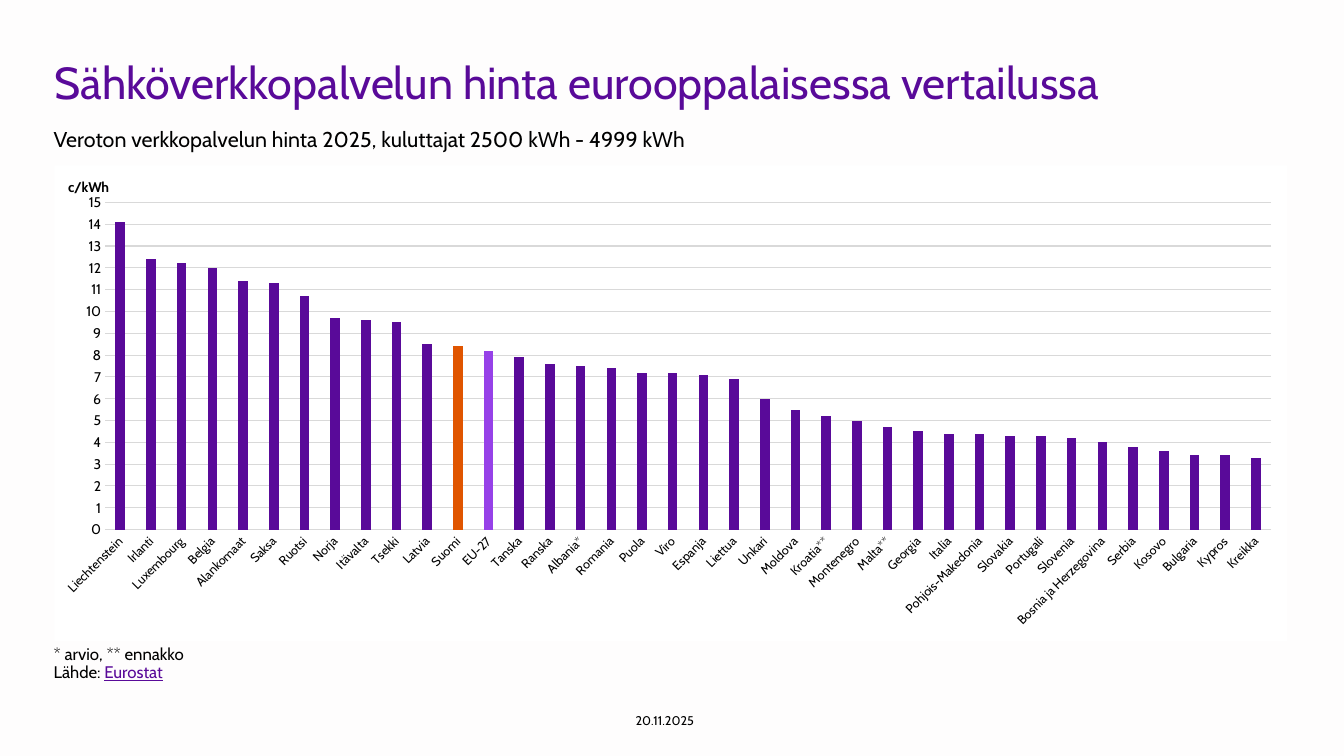
import dataclasses

import lxml.etree
import pptx
import pptx.chart.data
import pptx.dml.color
import pptx.enum.chart
import pptx.enum.text
import pptx.oxml
import pptx.oxml.ns
import pptx.util

PURPLE, ORANGE, VIOLET = "590A99", "E05500", "9641E8"
BLACK, WHITE, GREY, PAPER = "000000", "FFFFFF", "D9D9D9", "FEFDFD"
FONT = "Cabin"
SLIDE_W, SLIDE_H = pptx.util.Inches(13.33), pptx.util.Inches(7.5)

PRICES = {
    "Liechtenstein": 14.1, "Irlanti": 12.4, "Luxembourg": 12.2, "Belgia": 12,
    "Alankomaat": 11.4, "Saksa": 11.3, "Ruotsi": 10.7, "Norja": 9.7,
    "Itävalta": 9.6, "Tsekki": 9.5, "Latvia": 8.5, "Suomi": 8.4,
    "EU-27": 8.2, "Tanska": 7.9, "Ranska": 7.6, "Albania*": 7.5,
    "Romania": 7.4, "Puola": 7.2, "Viro": 7.2, "Espanja": 7.1,
    "Liettua": 6.9, "Unkari": 6, "Moldova": 5.5, "Kroatia**": 5.2,
    "Montenegro": 5, "Malta**": 4.7, "Georgia": 4.5, "Italia": 4.4,
    "Pohjois-Makedonia": 4.4, "Slovakia": 4.3, "Portugali": 4.3, "Slovenia": 4.2,
    "Bosnia ja Herzegovina": 4, "Serbia": 3.8, "Kosovo": 3.6, "Bulgaria": 3.4,
    "Kypros": 3.4, "Kreikka": 3.3,
}
HIGHLIGHTS = {"Suomi": ORANGE, "EU-27": VIOLET}


@dataclasses.dataclass
class Area:
    """Left, top, width and height in percent of the slide."""
    x: float
    y: float
    w: float
    h: float

    def emu(self) -> list[int]:
        sizes = (SLIDE_W, SLIDE_H, SLIDE_W, SLIDE_H)
        shares = (self.x, self.y, self.w, self.h)
        return [int(size * share / 100) for size, share in zip(sizes, shares)]


@dataclasses.dataclass
class TextBlock:
    area: Area
    size: float
    lines: list[list[tuple[str, dict]]]
    color: str = BLACK
    para: dict = dataclasses.field(default_factory=dict)
    frame: dict = dataclasses.field(default_factory=dict)


LINK = {"color": PURPLE, "underline": True}
TEXTS = [
    TextBlock(Area(4.05, 7.33, 91.73, 14.53), 32,
              [[("Sähköverkkopalvelun hinta eurooppalaisessa vertailussa", {})]],
              color=PURPLE, para={"line_spacing": 0.9}),
    TextBlock(Area(4, 16.93, 91.8, 4), 15.3,
              [[("Veroton verkkopalvelun hinta 2025, kuluttajat 2500 kWh - 4999 kWh", {})]],
              para={"line_spacing": 0.7}),
    TextBlock(Area(4, 84.8, 91.8, 5.33), 12,
              [[("* arvio, ** ennakko", {})], [("Lähde: ", {}), ("Eurostat", LINK)]],
              para={"line_spacing": 0.9}),
    TextBlock(Area(45.3, 92.67, 8.33, 5.33), 9, [[("20.11.2025", {})]],
              para={"alignment": pptx.enum.text.PP_ALIGN.CENTER},
              frame={"margin_right": 0,
                     "vertical_anchor": pptx.enum.text.MSO_ANCHOR.MIDDLE}),
]
CHART_AREA = Area(4.05, 21.87, 91.73, 62.93)
PLOT = {"x": 4.1, "y": 7.8, "w": 94.6, "h": 68.8}  # percent of the chart
UNIT = {"x": 0.9, "y": 1.9}


def rgb(color: str) -> pptx.dml.color.RGBColor:
    return pptx.dml.color.RGBColor.from_string(color)


def set_all(target: object, values: dict) -> None:
    for name, value in values.items():
        setattr(target, name, value)


def style_font(font, size: float, color: str, **extra) -> None:
    set_all(font, {"name": FONT, "size": pptx.util.Pt(size), **extra})
    font.color.rgb = rgb(color)


def style_line(line) -> None:
    line.color.rgb = rgb(GREY)
    line.width = pptx.util.Pt(0.75)


def add_text(s, block: TextBlock) -> None:
    tf = s.shapes.add_textbox(*block.area.emu()).text_frame
    set_all(tf, {"word_wrap": True, "margin_left": 0, **block.frame})
    p = tf.paragraphs[0]
    set_all(p, block.para)
    for i, line in enumerate(block.lines):
        if i:
            p.add_line_break()
        for text, style in line:
            r = p.add_run()
            r.text = text
            style_font(r.font, block.size, **{"color": block.color, **style})


def manual_layout(shares: dict, inner: bool = False):
    """Build a c:layout element from percentages of the chart."""
    layout = pptx.oxml.parse_xml(f"<c:layout {pptx.oxml.ns.nsdecls('c')}/>")
    qn = pptx.oxml.ns.qn
    manual = lxml.etree.SubElement(layout, qn("c:manualLayout"))
    values = {"layoutTarget": "inner"} if inner else {}
    values.update({"xMode": "edge", "yMode": "edge"})
    values.update({key: str(share / 100) for key, share in shares.items()})
    for tag, value in values.items():
        lxml.etree.SubElement(manual, qn(f"c:{tag}")).set("val", value)
    return layout


def add_price_chart(s) -> None:
    data = pptx.chart.data.CategoryChartData()
    data.categories = list(PRICES)
    data.add_series("c/kWh", list(PRICES.values()))
    kind = pptx.enum.chart.XL_CHART_TYPE.COLUMN_CLUSTERED
    chart = s.shapes.add_chart(kind, *CHART_AREA.emu(), data).chart
    set_all(chart, {"has_legend": False, "has_title": False})
    style_font(chart.font, 10, BLACK)

    # Columns
    plot = chart.plots[0]
    set_all(plot, {"gap_width": 219, "overlap": -27, "vary_by_categories": False})
    series = plot.series[0]
    series.invert_if_negative = False
    series.format.fill.solid()
    series.format.fill.fore_color.rgb = rgb(PURPLE)
    for i, country in enumerate(PRICES):
        if country in HIGHLIGHTS:
            fill = series.points[i].format.fill
            fill.solid()
            fill.fore_color.rgb = rgb(HIGHLIGHTS[country])

    # Axes
    none = pptx.enum.chart.XL_TICK_MARK.NONE
    cat, val = chart.category_axis, chart.value_axis
    for axis, size in ((cat, 9), (val, 10)):
        set_all(axis, {"major_tick_mark": none, "minor_tick_mark": none})
        style_font(axis.tick_labels.font, size, BLACK)
    style_line(cat.format.line)
    cat.tick_labels.font  # ensures the text properties exist
    qn = pptx.oxml.ns.qn
    body = cat._element.find(qn("c:txPr")).find(qn("a:bodyPr"))
    body.set("rot", "-2700000")
    body.set("vert", "horz")
    set_all(val, {"minimum_scale": 0, "maximum_scale": 15, "major_unit": 1})
    set_all(val.tick_labels, {"number_format": "0", "number_format_is_linked": False})
    val.format.line.fill.background()
    style_line(val.major_gridlines.format.line)

    # Unit label above the value axis
    title = val.axis_title
    title.text_frame.text = "c/kWh"
    style_font(title.text_frame.paragraphs[0].runs[0].font, 10, BLACK, bold=True)
    rich = title._element.find(qn("c:tx")).find(qn("c:rich"))
    rich.find(qn("a:bodyPr")).set("rot", "0")
    place(title._element, manual_layout(UNIT), after="c:tx")

    # Plot position and white background
    space = chart._chartSpace
    place(space.chart.plotArea, manual_layout(PLOT, inner=True))
    space.chart.addnext(pptx.oxml.parse_xml(
        f"<c:spPr {pptx.oxml.ns.nsdecls('c', 'a')}><a:solidFill>"
        f'<a:srgbClr val="{WHITE}"/></a:solidFill><a:ln><a:noFill/></a:ln></c:spPr>'))


def place(parent, layout, after: str = "") -> None:
    """Swap in a layout, first in its parent or behind the given child."""
    old = parent.find(pptx.oxml.ns.qn("c:layout"))
    if old is not None:
        parent.remove(old)
    if after:
        parent.find(pptx.oxml.ns.qn(after)).addnext(layout)
    else:
        parent.insert(0, layout)


def main() -> None:
    prs = pptx.Presentation()
    set_all(prs, {"slide_width": SLIDE_W, "slide_height": SLIDE_H})
    s = prs.slides.add_slide(prs.slide_layouts[6])
    s.background.fill.solid()
    s.background.fill.fore_color.rgb = rgb(PAPER)
    for block in TEXTS:
        add_text(s, block)
    add_price_chart(s)
    prs.save("out.pptx")


if __name__ == "__main__":
    main()
